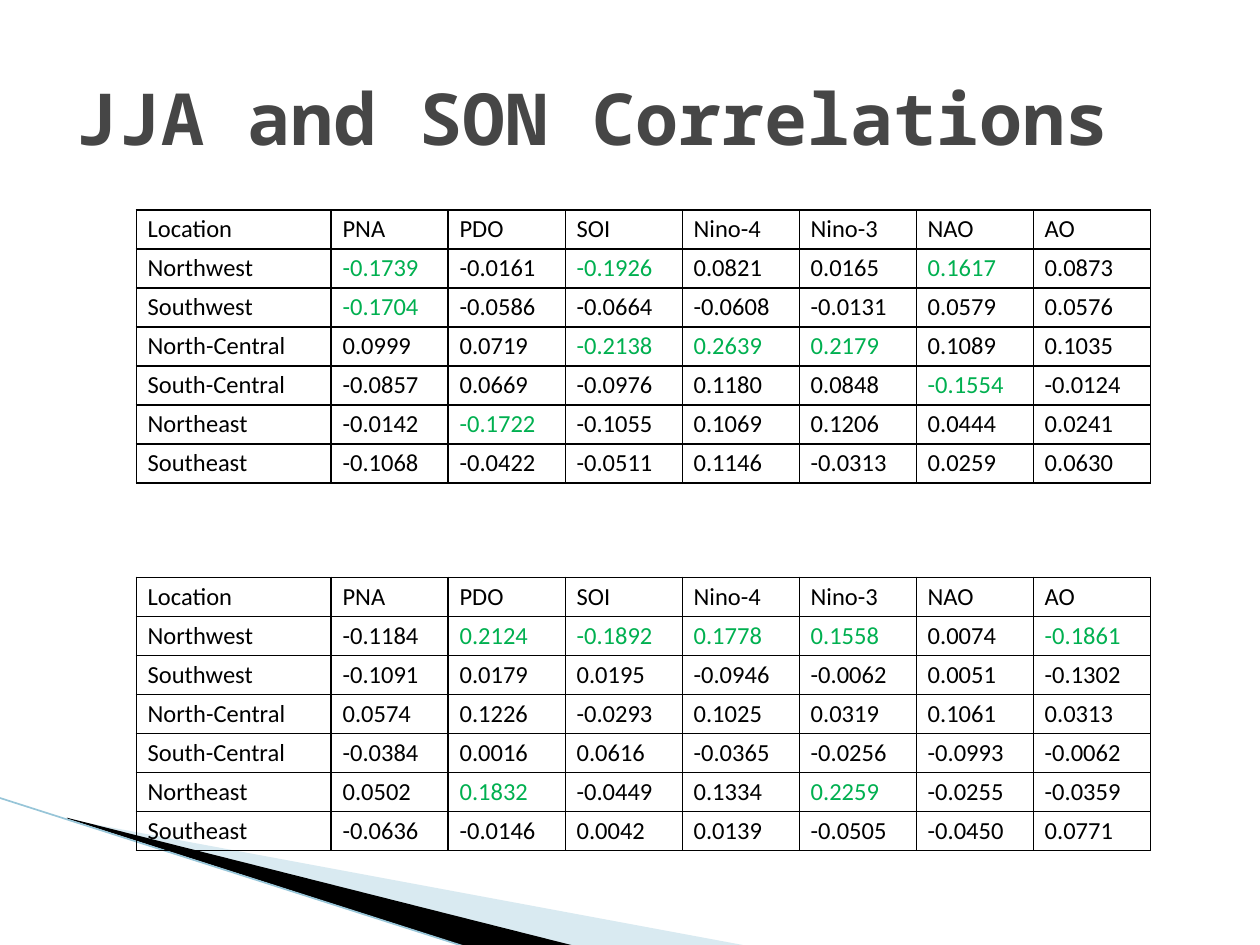
from dataclasses import dataclass

from lxml import etree
from pptx import Presentation
from pptx.dml.color import RGBColor
from pptx.enum import shapes, text
from pptx.oxml import ns
from pptx.util import Pt


@dataclass(frozen=True)
class Theme:
    title_font: str = "Noto Sans Mono"
    body_font: str = "Calibri"
    title_size: float = 41
    body_size: float = 14
    title: str = "464646"
    ink: str = "000000"
    strong: str = "00B050"
    wedge: str = "A0CBDC"
    edge: str = "97C5D8"


THEME = Theme()
STRONG_FROM = 0.15  # correlations at least this large are highlighted
TABLE_LEFT = 77.9
COLUMN_WIDTHS = [111.4] + [66.87] * 7
ROW_HEIGHT = 22.3
HEADER = "Location PNA PDO SOI Nino-4 Nino-3 NAO AO".split()

SUMMER = """
Northwest -0.1739 -0.0161 -0.1926 0.0821 0.0165 0.1617 0.0873
Southwest -0.1704 -0.0586 -0.0664 -0.0608 -0.0131 0.0579 0.0576
North-Central 0.0999 0.0719 -0.2138 0.2639 0.2179 0.1089 0.1035
South-Central -0.0857 0.0669 -0.0976 0.1180 0.0848 -0.1554 -0.0124
Northeast -0.0142 -0.1722 -0.1055 0.1069 0.1206 0.0444 0.0241
Southeast -0.1068 -0.0422 -0.0511 0.1146 -0.0313 0.0259 0.0630
"""
AUTUMN = """
Northwest -0.1184 0.2124 -0.1892 0.1778 0.1558 0.0074 -0.1861
Southwest -0.1091 0.0179 0.0195 -0.0946 -0.0062 0.0051 -0.1302
North-Central 0.0574 0.1226 -0.0293 0.1025 0.0319 0.1061 0.0313
South-Central -0.0384 0.0016 0.0616 -0.0365 -0.0256 -0.0993 -0.0062
Northeast 0.0502 0.1832 -0.0449 0.1334 0.2259 -0.0255 -0.0359
Southeast -0.0636 -0.0146 0.0042 0.0139 -0.0505 -0.0450 0.0771
"""


def color(value):
    return RGBColor.from_string(value)


def add_element(parent, tag, **attributes):
    return etree.SubElement(parent, ns.qn(tag), attributes)


def write(frame, words, font=THEME.body_font, size=THEME.body_size,
          ink=THEME.ink, bold=False, spacing=None):
    """Put one left-aligned paragraph in a text frame."""
    para = frame.paragraphs[0]
    para.alignment = text.PP_ALIGN.LEFT
    para.line_spacing = spacing
    span = para.add_run()
    span.text = words
    span.font.name, span.font.size, span.font.bold = font, Pt(size), bold
    span.font.color.rgb = color(ink)


def add_wedge(page, points, fill, opacity=None):
    corners = [(Pt(x), Pt(y)) for x, y in points]
    builder = page.shapes.build_freeform(*corners[0], scale=1.0)
    builder.add_line_segments(corners[1:], close=True)
    wedge = builder.convert_to_shape()
    wedge.shadow.inherit = False
    wedge.line.fill.background()
    wedge.fill.solid()
    wedge.fill.fore_color.rgb = color(fill)
    if opacity is not None:
        shade = wedge.fill._xPr.find(".//" + ns.qn("a:srgbClr"))
        add_element(shade, "a:alpha", val=str(opacity * 1000))


def add_edge(page, start, end):
    ends = [Pt(value) for value in (*start, *end)]
    edge = page.shapes.add_connector(shapes.MSO_CONNECTOR.STRAIGHT, *ends)
    edge.line.color.rgb = color(THEME.edge)
    edge.line.width = Pt(0.95)
    add_element(edge._element.spPr, "a:effectLst")


def add_borders(cell):
    properties = cell._tc.get_or_add_tcPr()
    for side in ("a:lnL", "a:lnR", "a:lnT", "a:lnB"):
        line = add_element(properties, side, w=str(Pt(1)))
        fill = add_element(line, "a:solidFill")
        add_element(fill, "a:srgbClr", val=THEME.ink)


def cell_ink(words, column):
    is_strong = column > 0 and abs(float(words)) >= STRONG_FROM
    return THEME.strong if is_strong else THEME.ink


def add_correlations(page, top, data):
    body = [line.split() for line in data.strip().splitlines()]
    rows = [HEADER] + body
    frame = page.shapes.add_table(
        len(rows), len(HEADER), Pt(TABLE_LEFT), Pt(top),
        Pt(sum(COLUMN_WIDTHS)), Pt(ROW_HEIGHT * len(rows)))
    table = frame.table
    table.first_row = table.horz_banding = False
    for column, width in zip(table.columns, COLUMN_WIDTHS):
        column.width = Pt(width)
    for r, row in enumerate(rows):
        table.rows[r].height = Pt(ROW_HEIGHT)
        for c, words in enumerate(row):
            cell = table.cell(r, c)
            cell.margin_left = cell.margin_right = Pt(6.5)
            cell.margin_top = cell.margin_bottom = 0
            add_borders(cell)
            cell.fill.background()
            ink = cell_ink(words, c) if r else THEME.ink
            write(cell.text_frame, words, ink=ink, spacing=1.15)


def set_title(page, words):
    box = page.shapes.title
    box.left, box.top, box.width, box.height = Pt(36), Pt(21.6), Pt(648), Pt(90)
    frame = box.text_frame
    frame.word_wrap = True
    frame.auto_size = text.MSO_AUTO_SIZE.NONE
    frame.vertical_anchor = text.MSO_ANCHOR.MIDDLE
    write(frame, words, font=THEME.title_font, size=THEME.title_size,
          ink=THEME.title, bold=True)


def main():
    deck = Presentation()
    deck.slide_width, deck.slide_height = Pt(720), Pt(540)
    page = deck.slides.add_slide(deck.slide_layouts.get_by_name("Title Only"))
    set_title(page, "JJA and SON Correlations")
    add_wedge(page, [(39.6, 468.4), (428.4, 540.7), (328.3, 540.7), (39.6, 468)],
              THEME.wedge, opacity=40)
    add_wedge(page, [(38.2, 467.3), (329, 540.7), (267.8, 541.4), (38.9, 468)],
              THEME.ink)
    add_edge(page, (-0.7, 455.8), (267.1, 541.4))
    add_correlations(page, 120.1, SUMMER)
    add_correlations(page, 329.9, AUTUMN)
    deck.save("out.pptx")


if __name__ == "__main__":
    main()
